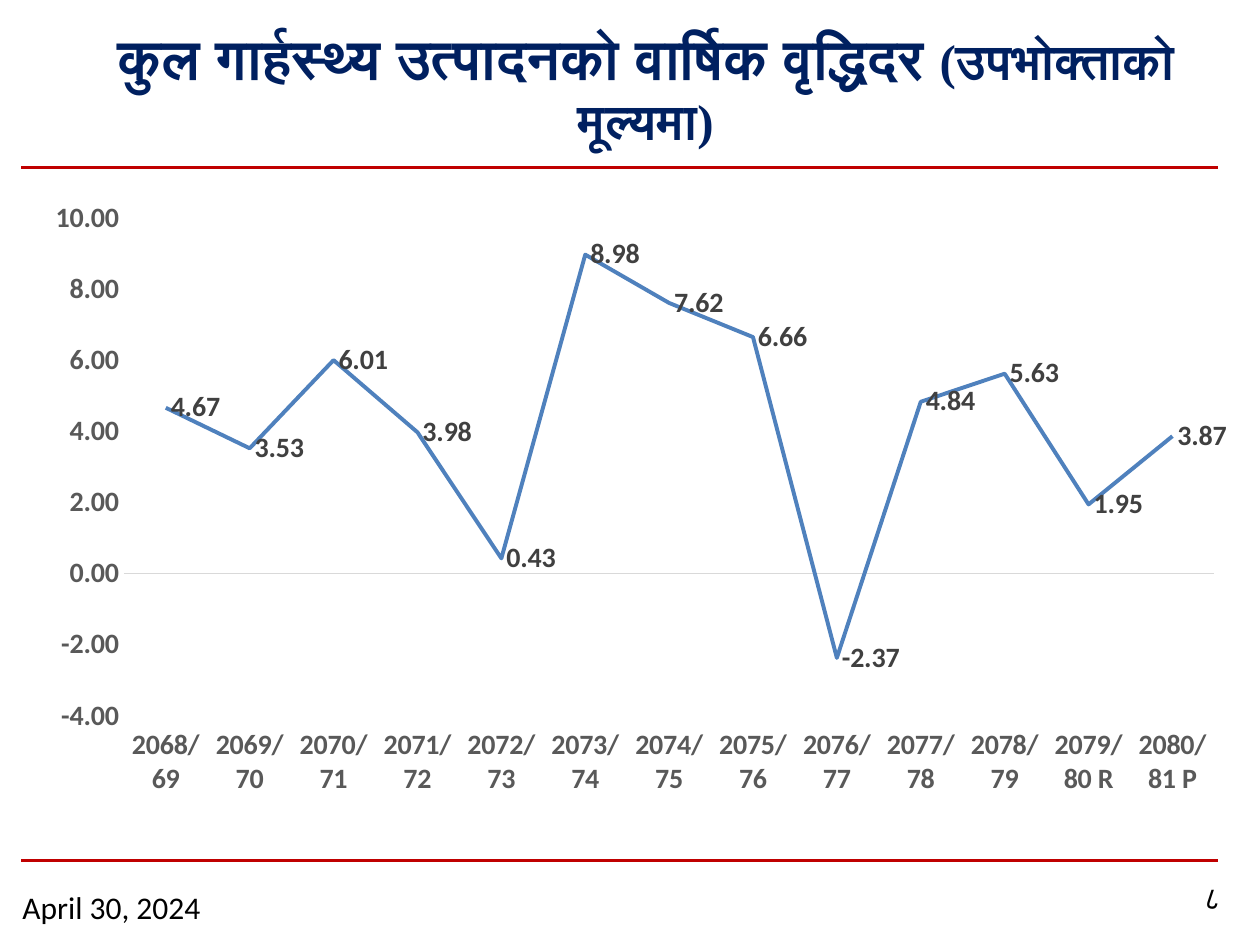
"""Build a slide on the annual growth rate of gross domestic product."""
from lxml.etree import SubElement
from pptx import Presentation
from pptx.chart.data import CategoryChartData
from pptx.dml.color import RGBColor
from pptx.enum.chart import XL_CHART_TYPE as ChartType
from pptx.enum.chart import XL_LABEL_POSITION as LabelPosition
from pptx.enum.chart import XL_TICK_LABEL_POSITION as TickLabelPosition
from pptx.enum.chart import XL_TICK_MARK as TickMark
from pptx.enum.shapes import MSO_CONNECTOR as Connector
from pptx.enum.text import MSO_ANCHOR as Anchor
from pptx.enum.text import PP_ALIGN as Align
from pptx.oxml.ns import qn
from pptx.util import Inches, Pt

BLACK = RGBColor(0x00, 0x00, 0x00)
NAVY = RGBColor(0x00, 0x20, 0x60)
RED = RGBColor(0xC0, 0x00, 0x00)
BLUE = RGBColor(0x4F, 0x81, 0xBD)
AXIS_GREY = RGBColor(0x59, 0x59, 0x59)
LABEL_GREY = RGBColor(0x40, 0x40, 0x40)
RULE_GREY = RGBColor(0xD9, 0xD9, 0xD9)

GROWTH = {
    "2068/69": 4.67, "2069/70": 3.53, "2070/71": 6.01, "2071/72": 3.98,
    "2072/73": 0.43, "2073/74": 8.98, "2074/75": 7.62, "2075/76": 6.66,
    "2076/77": -2.37, "2077/78": 4.84, "2078/79": 5.63,
    "2079/80 R": 1.95, "2080/81 P": 3.87,
}


def style_font(font, name, size, color, bold=False):
    """Set the typeface, size, colour and weight of a font."""
    font.name = name
    font.size = Pt(size)
    font.color.rgb = color
    font.bold = bold


def add_rule(slide, y):
    """Draw a red line across the slide at height y."""
    rule = slide.shapes.add_connector(
        Connector.STRAIGHT, Inches(0.17), Inches(y), Inches(9.67), Inches(y))
    rule.line.color.rgb = RED
    rule.line.width = Pt(1.5)
    SubElement(rule._element.spPr, qn("a:effectLst"))


def add_text(slide, place, pieces, font_name, color=BLACK, bold=False,
             align=Align.LEFT, anchor=Anchor.TOP):
    """Add one paragraph made of (text, size) pieces."""
    frame = slide.shapes.add_textbox(*map(Inches, place)).text_frame
    frame.word_wrap = True
    frame.vertical_anchor = anchor
    paragraph = frame.paragraphs[0]
    paragraph.alignment = align
    for text, size in pieces:
        run = paragraph.add_run()
        run.text = text
        style_font(run.font, font_name, size, color, bold)


def style_axis(axis):
    """Remove ticks and gridlines and set the tick label font."""
    axis.has_major_gridlines = False
    axis.major_tick_mark = TickMark.NONE
    axis.minor_tick_mark = TickMark.NONE
    style_font(axis.tick_labels.font, "Calibri", 16, AXIS_GREY, True)


def add_growth_chart(slide):
    """Add the line chart of yearly growth rates."""
    growth_data = CategoryChartData(number_format="0.00")
    growth_data.categories = list(GROWTH)
    growth_data.add_series("Series 1", list(GROWTH.values()))
    chart = slide.shapes.add_chart(
        ChartType.LINE, Inches(0.25), Inches(1.5), Inches(9.58), Inches(4.92),
        growth_data).chart
    chart.has_legend = False
    chart.has_title = False
    style_font(chart.font, "Calibri", 16, BLACK, True)

    years, rates = chart.category_axis, chart.value_axis
    style_axis(years)
    years.tick_label_position = TickLabelPosition.LOW
    years.format.line.color.rgb = RULE_GREY
    years.format.line.width = Pt(0.75)
    style_axis(rates)
    rates.minimum_scale, rates.maximum_scale, rates.major_unit = -4, 10, 2
    rates.tick_labels.number_format = "0.00"
    rates.tick_labels.number_format_is_linked = False
    rates.format.line.fill.background()

    plot = chart.plots[0]
    plot.vary_by_categories = False
    growth = plot.series[0]
    growth.smooth = False
    growth.format.line.color.rgb = BLUE
    growth.format.line.width = Pt(2.25)
    labels = growth.data_labels
    labels.show_value = True
    labels.position = LabelPosition.RIGHT
    labels.number_format = "0.00"
    labels.number_format_is_linked = False
    style_font(labels.font, "Calibri", 16, LABEL_GREY, True)


def main():
    """Assemble and save the slide."""
    deck = Presentation()
    deck.slide_width, deck.slide_height = Inches(10), Inches(7.5)
    slide = deck.slides.add_slide(deck.slide_layouts[6])
    for y in (1.33, 6.83):
        add_rule(slide, y)
    add_text(slide, (0.08, 7, 2.17, 0.41), [("April 30, 2024", 18)], "Calibri")
    add_growth_chart(slide)
    add_text(slide, (0.75, 0.17, 8.75, 1.03),
             [("कुल गार्हस्थ्य उत्पादनको वार्षिक वृद्धिदर ", 32),
              ("(उपभोक्ताको मूल्यमा)", 28)],
             "Times New Roman", NAVY, True, Align.CENTER, Anchor.MIDDLE)
    add_text(slide, (9.33, 6.92, 0.58, 0.48), [("८", 18)], "Roboto",
             align=Align.CENTER)
    deck.save("out.pptx")


if __name__ == "__main__":
    main()
